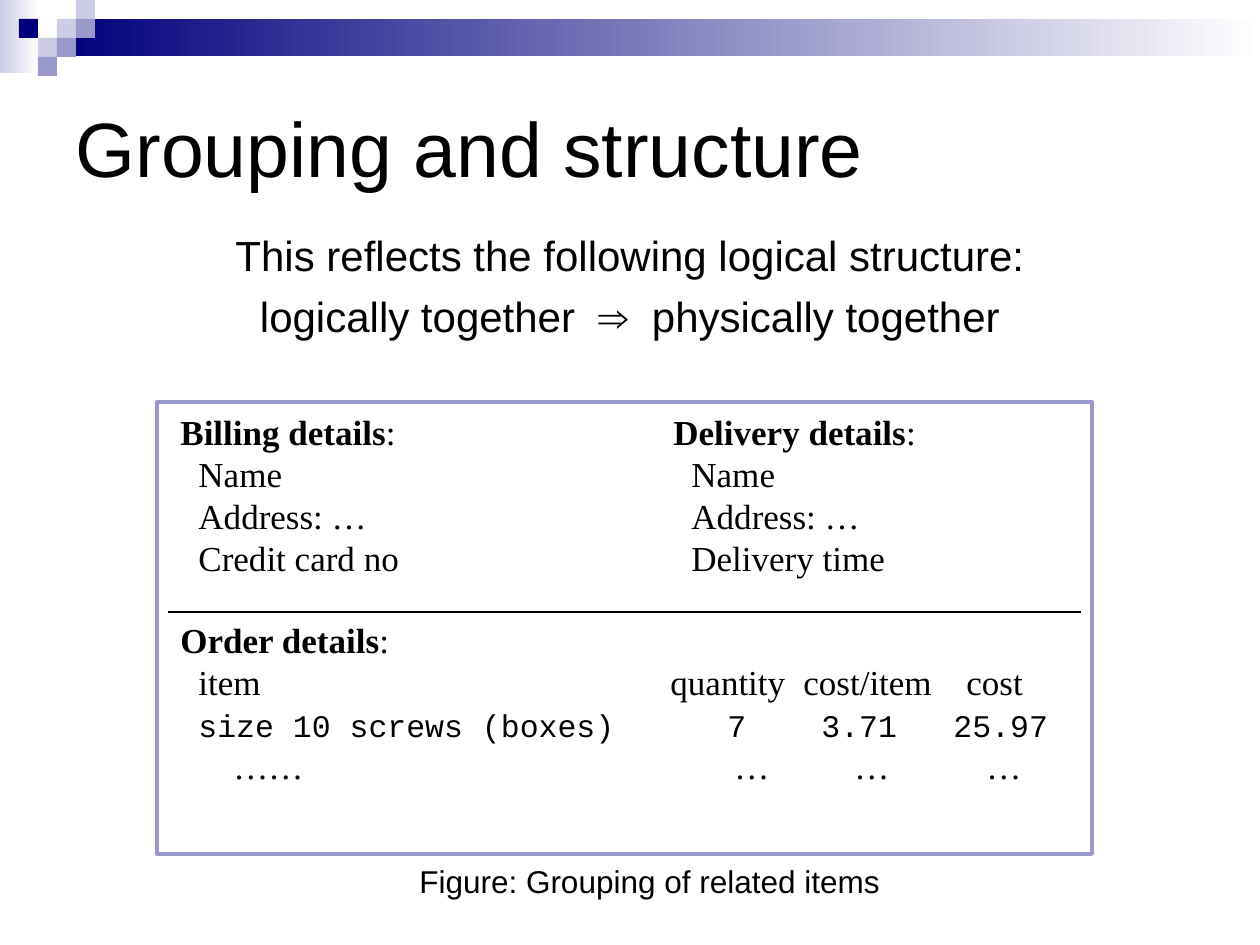
from dataclasses import dataclass

import lxml.etree
import pptx
import pptx.dml.color
import pptx.enum.shapes
import pptx.enum.text
import pptx.oxml.ns
import pptx.util

EMU_PER_PX = 914400 / 126
NAVY, LAVENDER, PALE, WHITE, BLACK = "00007D", "9999CC", "CCCCE6", "FFFFFF", "000000"
SANS, SERIF, MONO = "Arial", "Times New Roman", "Courier New"
CELL = 19
DETAIL_INDENT = 18


@dataclass
class Box:
    left: int
    top: int
    width: int
    height: int

    def emu(self):
        return [px(value) for value in (self.left, self.top, self.width, self.height)]


@dataclass
class Square:
    column: int
    row: int
    color: str


@dataclass
class DetailBlock:
    heading: str
    lines: list[str]
    box: Box


@dataclass
class OrderRow:
    text: str
    tabs: list[int]
    font: str = SERIF
    size: int = 20


def px(value: int) -> int:
    return round(value * EMU_PER_PX)


def rgb(color: str):
    return pptx.dml.color.RGBColor.from_string(color)


def add_rectangle(slide, box: Box, color: str, fade_to: str = "", outline: str = ""):
    shape = slide.shapes.add_shape(pptx.enum.shapes.MSO_SHAPE.RECTANGLE, *box.emu())
    shape.shadow.inherit = False
    if fade_to:
        shape.fill.gradient()
        shape.fill.gradient_angle = 0
        for stop, stop_color in zip(shape.fill.gradient_stops, (color, fade_to)):
            stop.color.rgb = rgb(stop_color)
    else:
        shape.fill.solid()
        shape.fill.fore_color.rgb = rgb(color)
    if outline:
        shape.line.color.rgb = rgb(outline)
        shape.line.width = pptx.util.Pt(2.25)
    else:
        shape.line.fill.background()
    return shape


def format_runs(paragraph, font: str, size: int) -> None:
    for run in paragraph.runs:
        run.font.name = font
        run.font.size = pptx.util.Pt(size)
        run.font.color.rgb = rgb(BLACK)


def add_text(slide, box: Box, lines: list[str], font: str, size: int, wrap: bool = True):
    frame = slide.shapes.add_textbox(*box.emu()).text_frame
    frame.word_wrap = wrap
    frame.text = "\n".join(lines)
    for paragraph in frame.paragraphs:
        format_runs(paragraph, font, size)
    return frame


def add_details(slide, block: DetailBlock):
    """Bold heading with a plain colon, then the detail lines."""
    frame = add_text(slide, block.box, [block.heading, *block.lines], SERIF, 20)
    heading = frame.paragraphs[0]
    heading.runs[0].font.bold = True
    heading.add_run().text = ":"
    format_runs(heading, SERIF, 20)
    for paragraph in frame.paragraphs:
        paragraph.line_spacing = pptx.util.Pt(24)
    return frame


def indent(paragraph, distance: int) -> None:
    properties = paragraph._p.get_or_add_pPr()
    properties.set("marL", str(px(distance)))
    properties.set("indent", "0")


def set_tabs(paragraph, positions: list[int]) -> None:
    properties = paragraph._p.get_or_add_pPr()
    tab_list = lxml.etree.SubElement(properties, pptx.oxml.ns.qn("a:tabLst"))
    for position in positions:
        lxml.etree.SubElement(tab_list, pptx.oxml.ns.qn("a:tab"),
                              pos=str(px(position)), algn="l")


def add_divider(slide, left: int, right: int, y: int) -> None:
    line = slide.shapes.add_connector(pptx.enum.shapes.MSO_CONNECTOR.STRAIGHT,
                                      px(left), px(y), px(right), px(y))
    line.line.color.rgb = rgb(BLACK)
    line.line.width = pptx.util.Pt(1)
    lxml.etree.SubElement(line._element.spPr, pptx.oxml.ns.qn("a:effectLst"))


def main() -> None:
    presentation = pptx.Presentation()
    presentation.slide_width, presentation.slide_height = px(1260), px(945)
    slide = presentation.slides.add_slide(presentation.slide_layouts[5])

    # Banner with its stepped squares
    add_rectangle(slide, Box(0, 0, 39, 73), PALE, fade_to=WHITE)
    add_rectangle(slide, Box(3 * CELL, CELL, 1203, 37), NAVY, fade_to=WHITE)
    squares = [Square(3, 1, PALE), Square(4, 0, PALE), Square(4, 1, LAVENDER),
               Square(2, 2, PALE), Square(1, 1, NAVY), Square(3, 2, LAVENDER),
               Square(2, 3, LAVENDER)]
    for square in squares:
        box = Box(square.column * CELL, square.row * CELL, CELL, CELL)
        add_rectangle(slide, box, square.color)

    # Title
    title = slide.shapes.title
    title.left, title.top, title.width, title.height = Box(63, 73, 1134, 147).emu()
    title.text_frame.text = "Grouping and structure"
    title.text_frame.vertical_anchor = pptx.enum.text.MSO_ANCHOR.MIDDLE
    title.text_frame.paragraphs[0].alignment = pptx.enum.text.PP_ALIGN.LEFT
    format_runs(title.text_frame.paragraphs[0], SANS, 44)

    # Principle
    principle = add_text(slide, Box(63, 223, 1134, 617),
                         ["This reflects the following logical structure:",
                          "logically together  ⇒  physically together"], SANS, 24)
    for paragraph in principle.paragraphs:
        paragraph.alignment = pptx.enum.text.PP_ALIGN.CENTER
    principle.paragraphs[1].space_before = pptx.util.Pt(6)

    # Form frame with billing and delivery side by side
    add_rectangle(slide, Box(157, 402, 935, 452), WHITE, outline=LAVENDER)
    blocks = [
        DetailBlock("Billing details", ["Name", "Address: …", "Credit card no"],
                    Box(168, 404, 400, 180)),
        DetailBlock("Delivery details", ["Name", "Address: …", "Delivery time"],
                    Box(661, 404, 400, 180)),
    ]
    for block in blocks:
        for paragraph in add_details(slide, block).paragraphs[1:]:
            indent(paragraph, DETAIL_INDENT)
    add_divider(slide, 168, 1081, 612)

    # Order lines, aligned by tab stops
    rows = [
        OrderRow("\titem\tquantity\tcost/item\tcost", [DETAIL_INDENT, 490, 623, 786]),
        OrderRow("\tsize 10 screws (boxes)\t7\t3.71\t25.97",
                 [DETAIL_INDENT, 547, 641, 773], MONO, 18),
        OrderRow("\t……\t…\t…\t…", [53, 554, 674, 806]),
    ]
    order = add_details(slide, DetailBlock("Order details", [row.text for row in rows],
                                           Box(168, 612, 924, 223)))
    for paragraph, row in zip(order.paragraphs[1:], rows):
        set_tabs(paragraph, row.tabs)
        format_runs(paragraph, row.font, row.size)

    # Caption
    add_text(slide, Box(407, 856, 490, 50), ["Figure: Grouping of related items"],
             SANS, 18, wrap=False)

    presentation.save("out.pptx")


if __name__ == "__main__":
    main()
